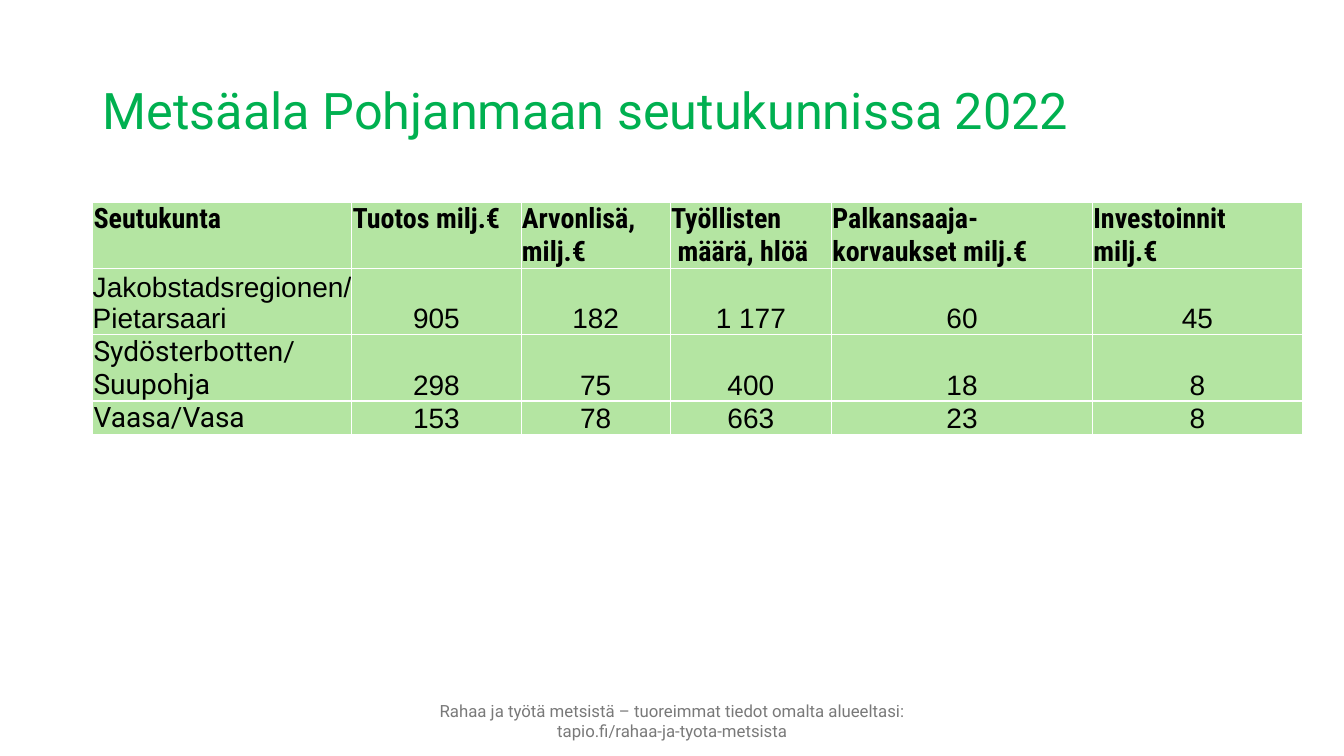
from lxml.etree import SubElement
from pptx import Presentation
from pptx.dml.color import RGBColor
from pptx.enum.text import MSO_ANCHOR, MSO_AUTO_SIZE, PP_ALIGN
from pptx.oxml.ns import qn
from pptx.util import Pt

# Content
TITLE = "Metsäala Pohjanmaan seutukunnissa 2022"
FOOTER = ("Rahaa ja työtä metsistä – tuoreimmat tiedot omalta alueeltasi: "
          "tapio.fi/rahaa-ja-tyota-metsista")
ROWS = [
    ["Seutukunta", "Tuotos milj.€", "Arvonlisä, milj.€",
     "Työllisten\n määrä, hlöä", "Palkansaaja-korvaukset milj.€",
     "Investoinnit\nmilj.€"],
    ["Jakobstadsregionen/Pietarsaari", "905", "182", "1 177", "60", "45"],
    ["Sydösterbotten/ Suupohja", "298", "75", "400", "18", "8"],
    ["Vaasa/Vasa", "153", "78", "663", "23", "8"],
]
WIDTHS = [185.04, 120.96, 106.56, 115.2, 186.48, 149.76]
HEIGHTS = [47.5, 46.8, 23.8, 23.8]
LEFT = 66.24
GREEN, PALE, GREY = "00B050", "B4E5A2", "797979"
BLACK, WHITE = "000000", "FFFFFF"


def color(code):
    return RGBColor.from_string(code)


def write(frame, text, size=20, font="Arial", tint=BLACK, bold=False,
          align=PP_ALIGN.LEFT, space=None):
    frame.word_wrap = True
    frame.text = text
    for para in frame.paragraphs:
        para.alignment = align
        if space:
            para.line_spacing = space
        for run in para.runs:
            run.font.size = Pt(size)
            run.font.name = font
            run.font.bold = bold
            run.font.color.rgb = color(tint)


def border(cell, tint, width):
    props = cell._tc.get_or_add_tcPr()
    for i, side in enumerate(("a:lnL", "a:lnR", "a:lnT", "a:lnB")):
        line = props.makeelement(qn(side), {"w": str(Pt(width))})
        fill = SubElement(line, qn("a:solidFill"))
        SubElement(fill, qn("a:srgbClr"), val=tint)
        props.insert(i, line)


def main():
    deck = Presentation()
    deck.slide_width, deck.slide_height = Pt(960), Pt(540)
    slide = deck.slides.add_slide(deck.slide_layouts[5])

    # Title
    title = slide.shapes.title
    title.left, title.top = Pt(LEFT), Pt(28.8)
    title.width, title.height = Pt(828), Pt(104.4)
    write(title.text_frame, TITLE, size=36, font="Roboto", tint=GREEN,
          space=0.9)
    title.text_frame.auto_size = MSO_AUTO_SIZE.NONE
    title.text_frame.vertical_anchor = MSO_ANCHOR.MIDDLE

    # Table
    table = slide.shapes.add_table(
        len(ROWS), len(WIDTHS), Pt(LEFT), Pt(144.3),
        Pt(sum(WIDTHS)), Pt(sum(HEIGHTS))).table
    for col, width in zip(table.columns, WIDTHS):
        col.width = Pt(width)
    for row, height in zip(table.rows, HEIGHTS):
        row.height = Pt(height)
    for r, texts in enumerate(ROWS):
        for c, text in enumerate(texts):
            cell = table.cell(r, c)
            head = r == 0
            name = c == 0 and r > 1
            inset = Pt(0.6 if head or name else 0)
            cell.margin_left = cell.margin_right = cell.margin_top = inset
            cell.margin_bottom = 0
            cell.vertical_anchor = MSO_ANCHOR.TOP if head else MSO_ANCHOR.BOTTOM
            cell.fill.solid()
            cell.fill.fore_color.rgb = color(PALE)
            border(cell, WHITE, 1)
            font = "Roboto Condensed" if head else "Roboto" if name else "Arial"
            write(cell.text_frame, text, font=font, bold=head,
                  align=PP_ALIGN.LEFT if head or c == 0 else PP_ALIGN.CENTER)

    # Footer
    foot = slide.shapes.add_textbox(Pt(306.72), Pt(500.4), Pt(347), Pt(28.8))
    write(foot.text_frame, FOOTER, size=12, font="Roboto", tint=GREY,
          align=PP_ALIGN.CENTER)
    foot.text_frame.vertical_anchor = MSO_ANCHOR.MIDDLE

    deck.save("out.pptx")


if __name__ == "__main__":
    main()
